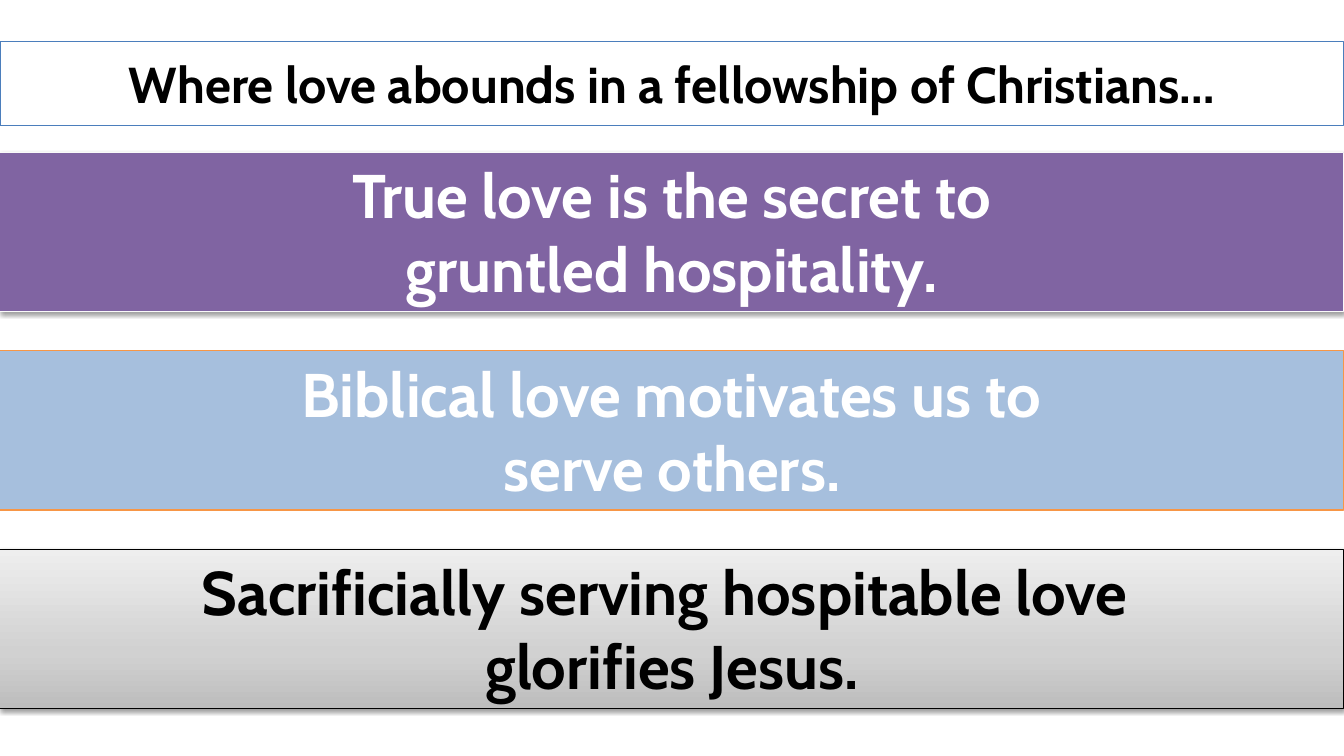
from copy import deepcopy

from lxml.etree import SubElement
from pptx import Presentation
from pptx.dml.color import RGBColor
from pptx.enum.shapes import MSO_SHAPE
from pptx.enum.text import MSO_ANCHOR, MSO_AUTO_SIZE, PP_ALIGN
from pptx.oxml.ns import qn
from pptx.util import Inches, Pt

WHITE = RGBColor(0xFF, 0xFF, 0xFF)
BLACK = RGBColor(0, 0, 0)
PURPLE = RGBColor(0x80, 0x64, 0xA2)
PALE_EDGE = RGBColor(0xF9, 0xF9, 0xF9)
BLUE = RGBColor(0x4F, 0x81, 0xBD)
BLUE_EDGE = RGBColor(0x4B, 0x7E, 0xBC)
ORANGE = RGBColor(0xF7, 0x96, 0x46)
GREYS = [(0, RGBColor(0xBD, 0xBD, 0xBD)),
         (0.35, RGBColor(0xD1, 0xD1, 0xD1)),
         (1, RGBColor(0xEE, 0xEE, 0xEE))]

WIDTH = 13.33
BAND_TOP, BAND_STEP, BAND_HEIGHT = 1.51, 1.97, 1.58


class BandSlide:
    font = {"name": "Cabin", "bold": True}

    def __init__(self, prs):
        self.s = prs.slides.add_slide(prs.slide_layouts[5])

    def set_text(self, sp, text, size, color, anchor):
        tf = sp.text_frame
        frame = {"word_wrap": True, "vertical_anchor": anchor,
                 "auto_size": MSO_AUTO_SIZE.SHAPE_TO_FIT_TEXT}
        for name, value in frame.items():
            setattr(tf, name, value)
        p = tf.paragraphs[0]
        p.text = text
        p.alignment = PP_ALIGN.CENTER
        for r in p.runs:
            for name, value in {**self.font, "size": Pt(size)}.items():
                setattr(r.font, name, value)
            r.font.color.rgb = color

    def paint(self, sp, fill, edge):
        if isinstance(fill, list):
            self.gradient(sp, fill)
        else:
            sp.fill.solid()
            sp.fill.fore_color.rgb = fill
        sp.line.color.rgb = edge
        sp.line.width = Pt(0.75)

    def gradient(self, sp, stops):
        """Fill from bottom to top with (position, colour) stops."""
        sp.fill.gradient()
        sp.fill.gradient_angle = 90
        gs_list = next(sp._element.spPr.iter(qn("a:gsLst")))
        while len(gs_list) < len(stops):
            gs_list.append(deepcopy(gs_list[0]))
        for stop, (position, color) in zip(sp.fill.gradient_stops, stops):
            stop.position = position
            stop.color.rgb = color

    def title(self, text, top, height):
        sp = self.s.shapes.title
        sp.left, sp.top = Inches(0), Inches(top)
        sp.width, sp.height = Inches(WIDTH), Inches(height)
        self.paint(sp, WHITE, BLUE_EDGE)
        self.set_text(sp, text, 36, BLACK, MSO_ANCHOR.MIDDLE)

    def band(self, text, top, fill, edge, color, alpha=None, shadow=False):
        sp = self.s.shapes.add_shape(MSO_SHAPE.RECTANGLE, Inches(0), Inches(top),
                                     Inches(WIDTH), Inches(BAND_HEIGHT))
        sp.shadow.inherit = False
        self.paint(sp, fill, edge)
        if alpha:
            clr = sp._element.spPr.find(qn("a:solidFill"))[0]
            SubElement(clr, qn("a:alpha"), val=str(alpha * 1000))
        if shadow:
            self.drop_shadow(sp)
        self.set_text(sp, text, 44, color, MSO_ANCHOR.TOP)

    def drop_shadow(self, sp):
        effects = sp._element.spPr.find(qn("a:effectLst"))
        outer = SubElement(effects, qn("a:outerShdw"), blurRad=str(Pt(3.1)),
                           dist=str(Pt(1.6)), dir="5400000", rotWithShape="0")
        clr = SubElement(outer, qn("a:srgbClr"), val=str(BLACK))
        SubElement(clr, qn("a:alpha"), val="38000")


def main():
    prs = Presentation()
    prs.slide_width, prs.slide_height = Inches(WIDTH), Inches(7.5)
    slide = BandSlide(prs)
    slide.title("Where love abounds in a fellowship of Christians…", 0.47, 0.71)
    bands = [
        ("True love is the secret to\vgruntled hospitality.",
         {"fill": PURPLE, "edge": PALE_EDGE, "color": WHITE, "shadow": True}),
        ("Biblical love motivates us to\vserve others.",
         {"fill": BLUE, "edge": ORANGE, "color": WHITE, "alpha": 50}),
        ("Sacrificially serving hospitable love \vglorifies Jesus.",
         {"fill": GREYS, "edge": BLACK, "color": BLACK, "shadow": True}),
    ]
    for i, (text, style) in enumerate(bands):
        slide.band(text, BAND_TOP + i * BAND_STEP, **style)
    prs.save("out.pptx")


if __name__ == "__main__":
    main()
